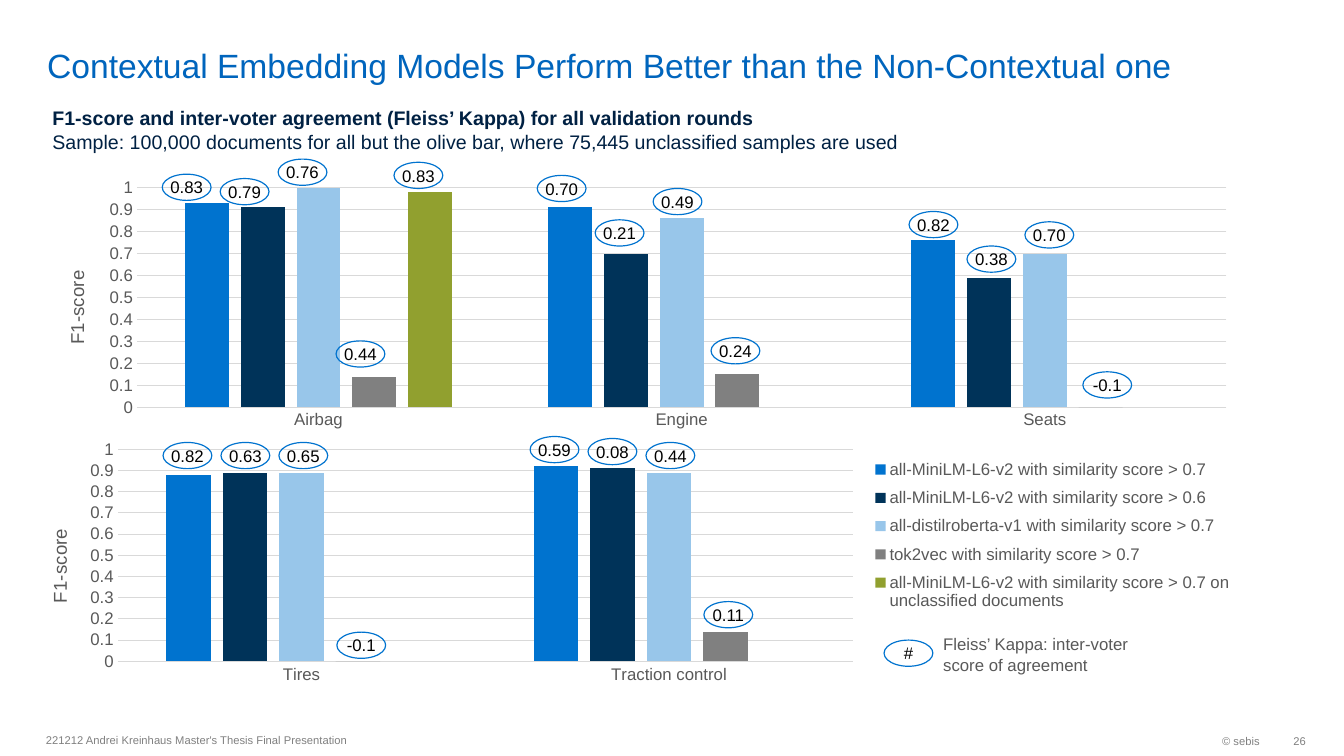
from lxml import etree
from pptx import Presentation
from pptx.chart.data import CategoryChartData
from pptx.dml.color import RGBColor
from pptx.enum.chart import XL_CHART_TYPE, XL_LEGEND_POSITION, XL_TICK_MARK
from pptx.enum.shapes import MSO_SHAPE
from pptx.enum.text import MSO_ANCHOR, PP_ALIGN
from pptx.oxml.ns import qn
from pptx.util import Cm, Pt

TITLE_BLUE = RGBColor(0x00, 0x65, 0xBD)
NAVY = RGBColor(0x00, 0x21, 0x43)
BLUE = RGBColor(0x00, 0x73, 0xCF)
DARK_BLUE = RGBColor(0x00, 0x33, 0x59)
LIGHT_BLUE = RGBColor(0x98, 0xC6, 0xEA)
OLIVE = RGBColor(0x91, 0xA0, 0x2F)
GREY = RGBColor(0x80, 0x80, 0x80)
TEXT_GREY = RGBColor(0x59, 0x59, 0x59)
GRID_GREY = RGBColor(0xD9, 0xD9, 0xD9)
BLACK = RGBColor(0x00, 0x00, 0x00)
FONT = "Arial"

# Content
TITLE = "Contextual Embedding Models Perform Better than the Non-Contextual one"
SUBTITLE = ("F1-score and inter-voter agreement (Fleiss’ Kappa) for all validation rounds\v"
            "Sample: 100,000 documents for all but the olive bar, "
            "where 75,445 unclassified samples are used")
KAPPA_NOTE = "Fleiss’ Kappa: inter-voter\vscore of agreement"
FOOTER = "221212 Andrei Kreinhaus Master's Thesis Final Presentation"
COPYRIGHT = "© sebis"
PAGE = "26"

MODELS = [
    ("all-MiniLM-L6-v2 with similarity score > 0.7", BLUE),
    ("all-MiniLM-L6-v2 with similarity score > 0.6", DARK_BLUE),
    ("all-distilroberta-v1 with similarity score > 0.7", LIGHT_BLUE),
    ("tok2vec with similarity score > 0.7", GREY),
    ("all-MiniLM-L6-v2 with similarity score > 0.7 on unclassified documents", OLIVE),
]

# Boxes in cm; layouts are x, y, width, height as shares of the chart
CHARTS = [
    {
        "box": (0.91, 10.95, 30.23, 6.58),
        "plot": (0.068, 0.057, 0.613, 0.812),
        "axis_title": (0.007, 0.347),
        "legend": (0.695, 0.06, 0.305, 0.65),
        "scores": {"Tires": (0.88, 0.89, 0.89, 0, None),
                   "Traction control": (0.92, 0.91, 0.89, 0.14, None)},
    },
    {
        "box": (0.91, 4.39, 30.61, 6.58),
        "plot": (0.083, 0.052, 0.897, 0.841),
        "axis_title": (0.021, 0.355),
        "legend": None,
        "scores": {"Airbag": (0.93, 0.91, 1, 0.14, 0.98),
                   "Engine": (0.91, 0.7, 0.86, 0.15, None),
                   "Seats": (0.76, 0.59, 0.7, 0, None)},
    },
]

# First bubble's left edge, then (kappa, top) for each bar, in cm
KAPPAS = [
    (4.09, [("0.83", 4.39), ("0.79", 4.5), ("0.76", 4.01), ("0.44", 8.59), ("0.83", 4.09)]),
    (13.54, [("0.70", 4.42), ("0.21", 5.54), ("0.49", 4.75), ("0.24", 8.51)]),
    (22.91, [("0.82", 5.33), ("0.38", 6.2), ("0.70", 5.59), ("-0.1", 9.37)]),
    (4.11, [("0.82", 11.15), ("0.63", 11.15), ("0.65", 11.15), ("-0.1", 15.93)]),
    (13.36, [("0.59", 11.0), ("0.08", 11.05), ("0.44", 11.15), ("0.11", 15.16)]),
]
BUBBLE_STEP = 1.46
BUBBLE_WIDTH, BUBBLE_HEIGHT = 1.23, 0.66


def style_font(font, size, color):
    font.name = FONT
    font.size = Pt(size)
    font.bold = False
    font.color.rgb = color


def set_text(shape, text, size, color, align=PP_ALIGN.LEFT, anchor=MSO_ANCHOR.TOP,
             insets=(0.25, 0.13, 0.25, 0.13), wrap=False):
    frame = shape.text_frame
    frame.text = text
    frame.word_wrap = wrap
    frame.vertical_anchor = anchor
    frame.margin_left, frame.margin_top, frame.margin_right, frame.margin_bottom = map(Cm, insets)
    paragraph = frame.paragraphs[0]
    paragraph.alignment = align
    for run in paragraph.runs:
        style_font(run.font, size, color)
    return paragraph


def add_text(slide, box, *content, **options):
    return set_text(slide.shapes.add_textbox(*map(Cm, box)), *content, **options)


def set_layout(element, values, inner=False):
    """Place a chart part by hand; the layout goes before its overlay or axes."""
    for old in element.findall(qn("c:layout")):
        element.remove(old)
    layout = etree.Element(qn("c:layout"))
    manual = etree.SubElement(layout, qn("c:manualLayout"))
    settings = [("layoutTarget", "inner")] if inner else []
    settings += [("xMode", "edge"), ("yMode", "edge")] + list(zip("xywh", values))
    for name, value in settings:
        etree.SubElement(manual, qn(f"c:{name}")).set("val", str(value))
    leading = [child for child in element if child.tag in (qn("c:tx"), qn("c:legendPos"))]
    element.insert(len(leading), layout)


def add_score_chart(slide, settings):
    scores = settings["scores"]
    data = CategoryChartData()
    data.categories = list(scores)
    for (name, _), values in zip(MODELS, zip(*scores.values())):
        data.add_series(name, values)
    chart = slide.shapes.add_chart(
        XL_CHART_TYPE.COLUMN_CLUSTERED, *map(Cm, settings["box"]), data).chart
    style_font(chart.font, 10, BLACK)
    chart.has_title = False

    plot = chart.plots[0]
    plot.gap_width, plot.overlap = 219, -27
    plot.vary_by_categories = False
    for series, (_, color) in zip(plot.series, MODELS):
        series.format.fill.solid()
        series.format.fill.fore_color.rgb = color
        series.invert_if_negative = False
    set_layout(chart.plots[0]._element.getparent(), settings["plot"], inner=True)

    # Axes
    category_axis, value_axis = chart.category_axis, chart.value_axis
    for axis in (category_axis, value_axis):
        axis.major_tick_mark = axis.minor_tick_mark = XL_TICK_MARK.NONE
        style_font(axis.tick_labels.font, 12, TEXT_GREY)
    value_axis.minimum_scale, value_axis.maximum_scale = 0, 1
    value_axis.major_unit = 0.1
    value_axis.format.line.fill.background()
    value_axis.has_major_gridlines = True
    for line in (category_axis.format.line, value_axis.major_gridlines.format.line):
        line.color.rgb = GRID_GREY
        line.width = Pt(0.75)
    axis_title = value_axis.axis_title
    axis_title.text_frame.text = "F1-score"
    style_font(axis_title.text_frame.paragraphs[0].runs[0].font, 13.3, TEXT_GREY)
    body = axis_title.text_frame._txBody.find(qn("a:bodyPr"))
    body.set("rot", "-5400000")
    body.set("vert", "horz")
    set_layout(axis_title._element, settings["axis_title"])

    # Legend
    chart.has_legend = settings["legend"] is not None
    if chart.has_legend:
        chart.legend.position = XL_LEGEND_POSITION.RIGHT
        chart.legend.include_in_layout = False
        style_font(chart.legend.font, 12, TEXT_GREY)
        set_layout(chart.legend._element, settings["legend"])


def add_bubble(slide, text, left, top):
    shape = slide.shapes.add_shape(
        MSO_SHAPE.OVAL, Cm(left), Cm(top), Cm(BUBBLE_WIDTH), Cm(BUBBLE_HEIGHT))
    shape.shadow.inherit = False
    shape.fill.background()
    shape.line.color.rgb = BLUE
    shape.line.width = Pt(0.85)
    set_text(shape, text, 12, BLACK, align=PP_ALIGN.CENTER, anchor=MSO_ANCHOR.MIDDLE,
             insets=(0, 0, 0, 0), wrap=True)


def main():
    presentation = Presentation()
    presentation.slide_width, presentation.slide_height = Cm(33.87), Cm(19.05)
    slide = presentation.slides.add_slide(presentation.slide_layouts[6])

    # Heading and footer
    add_text(slide, (0.94, 0.13, 29.41, 2.01), TITLE, 24, TITLE_BLUE,
             anchor=MSO_ANCHOR.BOTTOM, insets=(0.25, 0, 0.25, 0), wrap=True)
    add_text(slide, (26.06, 18.26, 5.94, 0.81), COPYRIGHT, 8, GREY,
             align=PP_ALIGN.RIGHT, anchor=MSO_ANCHOR.MIDDLE)
    add_text(slide, (0.91, 18.24, 16, 0.81), FOOTER, 8, GREY,
             anchor=MSO_ANCHOR.MIDDLE, wrap=True)
    add_text(slide, (32, 18.26, 0.91, 0.81), PAGE, 8, GREY, align=PP_ALIGN.RIGHT,
             anchor=MSO_ANCHOR.MIDDLE, insets=(0.25, 0.13, 0, 0.13))

    # Charts and kappa bubbles
    for settings in CHARTS:
        add_score_chart(slide, settings)
    for first_left, bubbles in KAPPAS:
        for index, (kappa, top) in enumerate(bubbles):
            add_bubble(slide, kappa, first_left + index * BUBBLE_STEP, top)

    # Kappa key and subtitle
    add_bubble(slide, "#", 22.28, 16.13)
    add_text(slide, (23.52, 15.85, 5.23, 1.17), KAPPA_NOTE, 12, TEXT_GREY)
    subtitle = add_text(slide, (1.32, 2.67, 22.17, 1.37), SUBTITLE, 14, NAVY,
                        insets=(0, 0, 0, 0))
    subtitle.runs[0].font.bold = True

    presentation.save("out.pptx")


if __name__ == "__main__":
    main()
